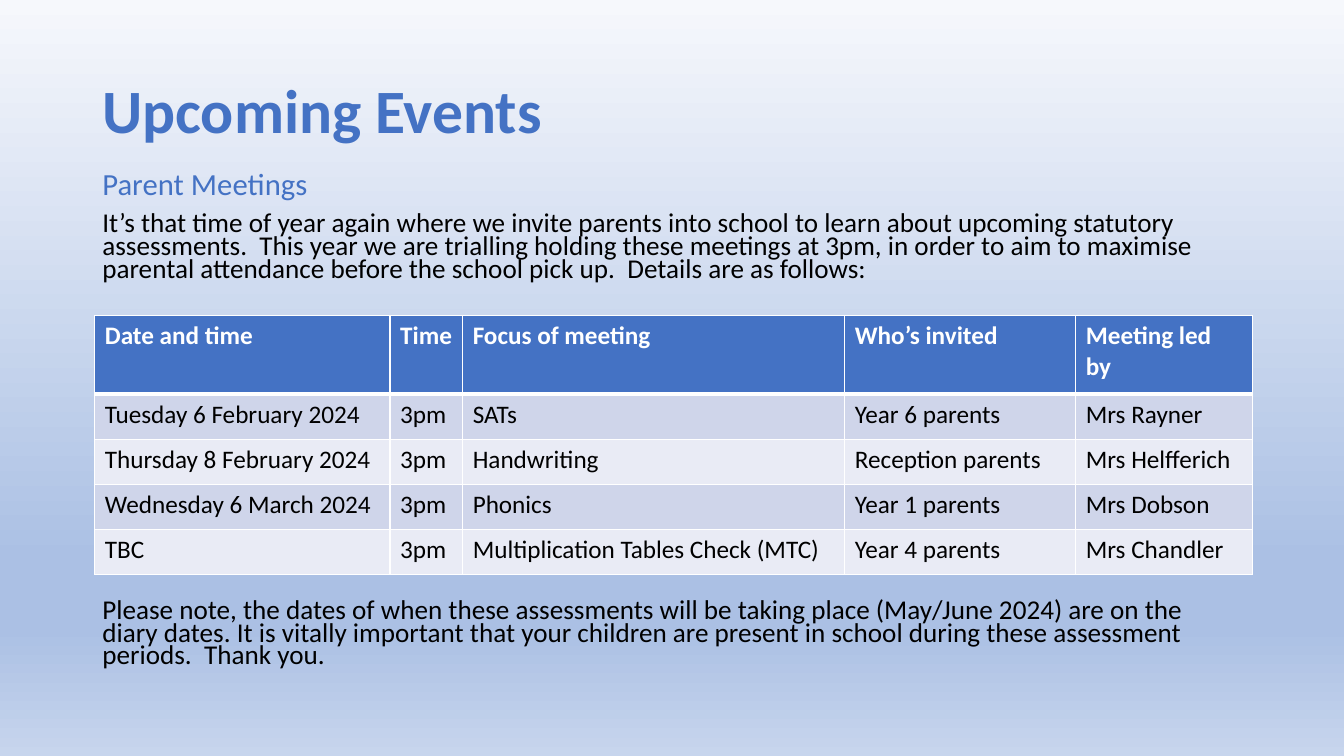
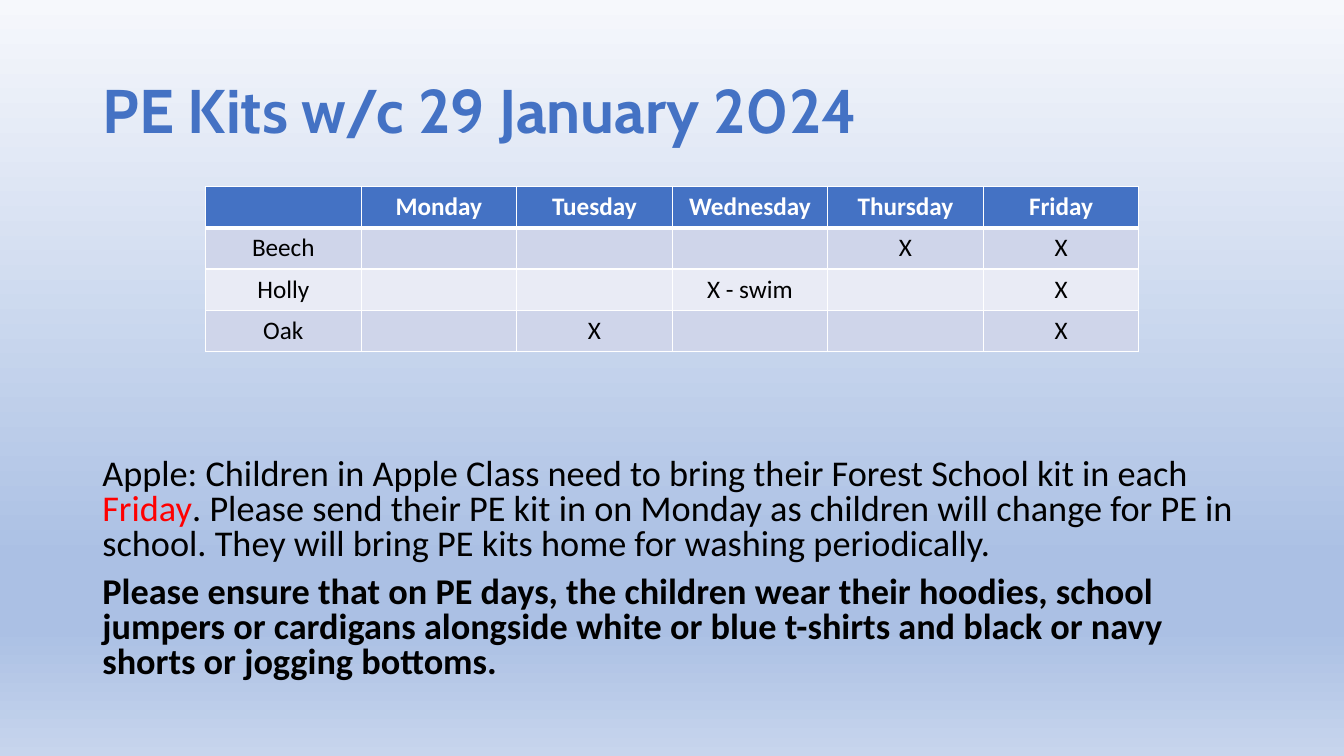
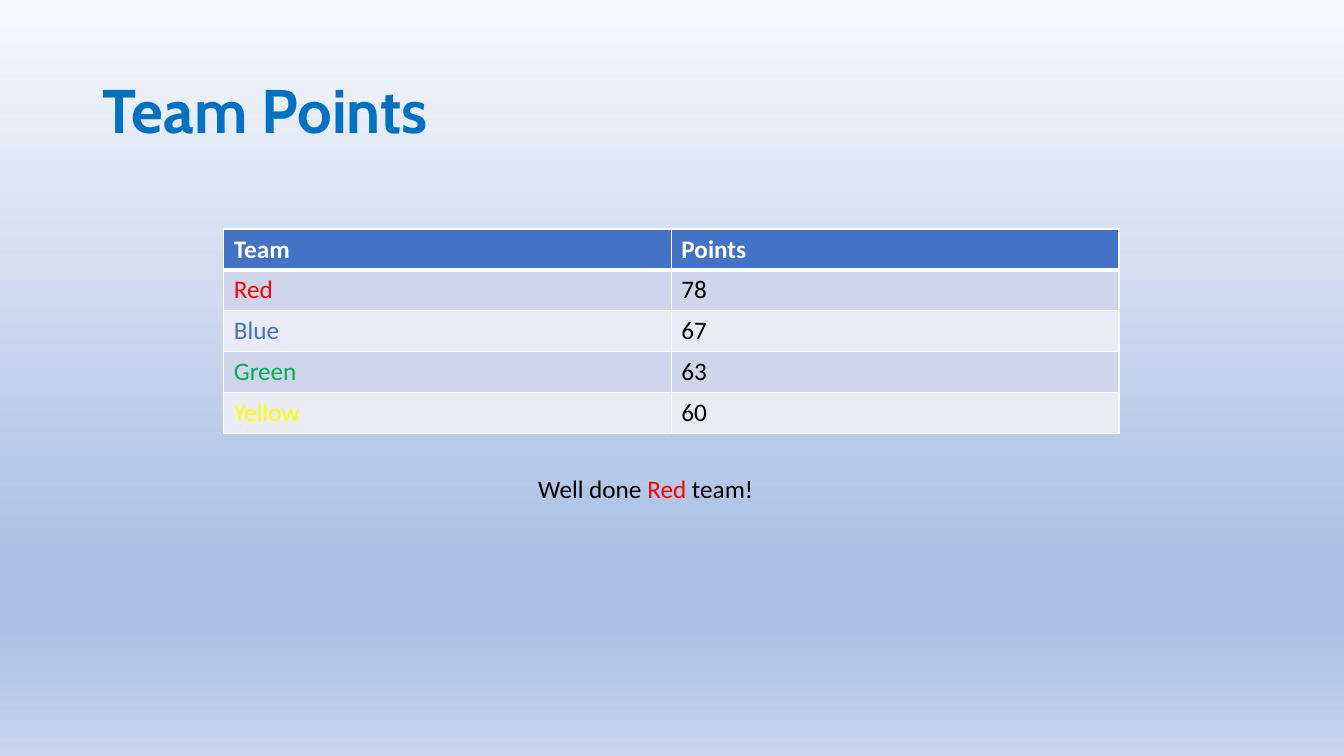
from dataclasses import dataclass
from typing import Sequence

import lxml.etree
import pptx
import pptx.dml.color
import pptx.enum.text
import pptx.oxml.ns
import pptx.util
from pptx.util import Cm

BLUE, WHITE, BLACK, RED = "4472C4", "FFFFFF", "000000", "FF0000"
BANDS = ("CFD5EA", "E9EBF5")
BACKDROP = ((0, "F6F8FC"), (74, "ABC0E4"), (83, "ABC0E4"), (100, "C7D5ED"))
LEFT, WIDTH = 2.33, 29.21
CENTER = pptx.enum.text.PP_ALIGN.CENTER


@dataclass(frozen=True)
class Span:
    text: str
    color: str | None = None


@dataclass(frozen=True)
class Para:
    """One paragraph; spans without a colour take the paragraph's."""
    spans: Sequence[Span]
    size: float = 18
    color: str = BLACK
    bold: bool = False
    font: str = "Calibri"
    line_spacing: float = 1
    before: float = 0
    align: pptx.enum.text.PP_ALIGN | None = None


@dataclass(frozen=True)
class Grid:
    """A table whose first row is the header; lengths in centimetres."""
    left: float
    top: float
    columns: Sequence[float]
    header_height: float
    row_height: float
    rows: Sequence[Sequence[str | Span]]
    align: pptx.enum.text.PP_ALIGN | None = None


def rgb(color: str) -> pptx.dml.color.RGBColor:
    return pptx.dml.color.RGBColor.from_string(color)


def add_element(parent, tag: str, **attributes: str):
    element = lxml.etree.SubElement(parent, pptx.oxml.ns.qn(tag))
    for name, value in attributes.items():
        element.set(name, value)
    return element


def paint_backdrop(master) -> None:
    fill = master.background.fill
    fill.gradient()
    fill.gradient_angle = 270
    stops = master.element.find(".//" + pptx.oxml.ns.qn("a:gsLst"))
    for stop in list(stops):
        stops.remove(stop)
    for percent, color in BACKDROP:
        stop = add_element(stops, "a:gs", pos=str(percent * 1000))
        add_element(stop, "a:srgbClr", val=color)


def write_para(para, content: Para) -> None:
    para.alignment = content.align
    para.line_spacing = content.line_spacing
    para.space_before = pptx.util.Pt(content.before)
    para.font.name = content.font
    para.font.size = pptx.util.Pt(content.size)
    para.font.bold = content.bold
    para.font.color.rgb = rgb(content.color)
    for span in content.spans:
        run = para.add_run()
        run.text = span.text
        if span.color:
            run.font.color.rgb = rgb(span.color)


def add_text(page, left: float, top: float, width: float, height: float,
             paras: Sequence[Para]):
    box = page.shapes.add_textbox(Cm(left), Cm(top), Cm(width), Cm(height))
    frame = box.text_frame
    frame.word_wrap = True
    for index, content in enumerate(paras):
        para = frame.add_paragraph() if index else frame.paragraphs[0]
        write_para(para, content)
    return box


def add_page(deck, title: str, font: str = "Cabin", color: str = BLUE):
    page = deck.slides.add_slide(deck.slide_layouts[6])
    heading = Para([Span(title)], 44, color, True, font, 0.9)
    box = add_text(page, LEFT, 1.01, WIDTH, 3.68, [heading])
    box.text_frame.vertical_anchor = pptx.enum.text.MSO_ANCHOR.MIDDLE
    return page


def draw_borders(cell, top: float, bottom: float) -> None:
    """Draw white cell borders; widths in points, the sides being 1 point."""
    properties = cell._tc.get_or_add_tcPr()
    widths = (("a:lnL", 1), ("a:lnR", 1), ("a:lnT", top), ("a:lnB", bottom))
    for position, (tag, width) in enumerate(widths):
        line = add_element(properties, tag, w=str(pptx.util.Pt(width)))
        add_element(add_element(line, "a:solidFill"), "a:srgbClr", val=WHITE)
        properties.insert(position, line)


def add_grid(page, grid: Grid) -> None:
    heights = [grid.header_height] + [grid.row_height] * (len(grid.rows) - 1)
    table = page.shapes.add_table(
        len(heights), len(grid.columns), Cm(grid.left), Cm(grid.top),
        Cm(sum(grid.columns)), Cm(sum(heights))).table
    for column, width in zip(table.columns, grid.columns):
        column.width = Cm(width)
    for index, (row, height, values) in enumerate(
            zip(table.rows, heights, grid.rows)):
        row.height = Cm(height)
        header = index == 0
        for cell, value in zip(row.cells, values):
            cell.fill.solid()
            cell.fill.fore_color.rgb = rgb(
                BLUE if header else BANDS[(index - 1) % 2])
            draw_borders(cell, 3 if index == 1 else 1, 3 if header else 1)
            span = value if isinstance(value, Span) else Span(value)
            write_para(cell.text_frame.paragraphs[0], Para(
                [span] if span.text else [], color=WHITE if header else BLACK,
                bold=header, align=grid.align))


def add_events(deck) -> None:
    page = add_page(deck, "Upcoming Events", "Calibri")
    add_text(page, LEFT, 4.27, WIDTH, 3.2, [
        Para([Span("Parent Meetings")], 21.9, BLUE, line_spacing=0.7, before=10),
        Para([Span(
            "It’s that time of year again where we invite parents into school "
            "to learn about upcoming statutory assessments.  This year we are "
            "trialling holding these meetings at 3pm, in order to aim to "
            "maximise parental attendance before the school pick up.  Details "
            "are as follows:")], 19.4, line_spacing=0.7, before=10)])
    add_grid(page, Grid(2.39, 7.95, (7.44, 1.83, 9.63, 5.82, 4.45), 1.98, 1.14, (
        ("Date and time", "Time", "Focus of meeting", "Who’s invited",
         "Meeting led by"),
        ("Tuesday 6 February 2024", "3pm", "SATs", "Year 6 parents",
         "Mrs Rayner"),
        ("Thursday 8 February 2024", "3pm", "Handwriting",
         "Reception parents", "Mrs Helfferich"),
        ("Wednesday 6 March 2024", "3pm", "Phonics", "Year 1 parents",
         "Mrs Dobson"),
        ("TBC", "3pm", "Multiplication Tables Check (MTC)",
         "Year 4 parents", "Mrs Chandler"))))
    add_text(page, LEFT, 15.02, WIDTH, 2.1, [Para([Span(
        "Please note, the dates of when these assessments will be taking place "
        "(May/June 2024) are on the diary dates. It is vitally important that "
        "your children are present in school during these assessment periods.  "
        "Thank you.")], 19.4, line_spacing=0.7, before=10)])


def add_kits(deck) -> None:
    page = add_page(deck, "PE Kits w/c 29 January 2024")
    add_grid(page, Grid(5.18, 4.7, (3.92,) * 6, 1.04, 1.04, (
        ("", "Monday", "Tuesday", "Wednesday", "Thursday", "Friday"),
        ("Beech", "", "", "", "X", "X"),
        ("Holly", "", "", "X - swim", "", "X"),
        ("Oak", "", "X", "", "", "X")), CENTER))
    add_text(page, LEFT, 11.43, WIDTH, 5.74, [
        Para([
            Span("Apple: Children in Apple Class need to bring their Forest "
                 "School kit in each "),
            Span("Friday", RED),
            Span(". Please send their PE kit in on Monday as children will "
                 "change for PE in school. They will bring PE kits home for "
                 "washing periodically.")],
            25.9, line_spacing=0.8, before=10),
        Para([Span(
            "Please ensure that on PE days, the children wear their hoodies, "
            "school jumpers or cardigans alongside white or blue t-shirts and "
            "black or navy shorts or jogging bottoms.")],
            25.9, bold=True, line_spacing=0.8, before=10)])


def add_points(deck) -> None:
    page = add_page(deck, "Team Points", color="0070C0")
    add_grid(page, Grid(5.64, 5.77, (11.28,) * 2, 1.03, 1.03, (
        ("Team", "Points"),
        (Span("Red", RED), "78"),
        (Span("Blue", BLUE), "67"),
        (Span("Green", "00B050"), "63"),
        (Span("Yellow", "FFFF00"), "60"))))
    add_text(page, 13.31, 11.81, 7.24, 1.02, [
        Para([Span("Well done "), Span("Red", RED), Span(" team!")])])


def main() -> None:
    deck = pptx.Presentation()
    deck.slide_width, deck.slide_height = Cm(33.87), Cm(19.05)
    paint_backdrop(deck.slide_master)
    add_events(deck)
    add_kits(deck)
    add_points(deck)
    deck.save("out.pptx")


if __name__ == "__main__":
    main()
